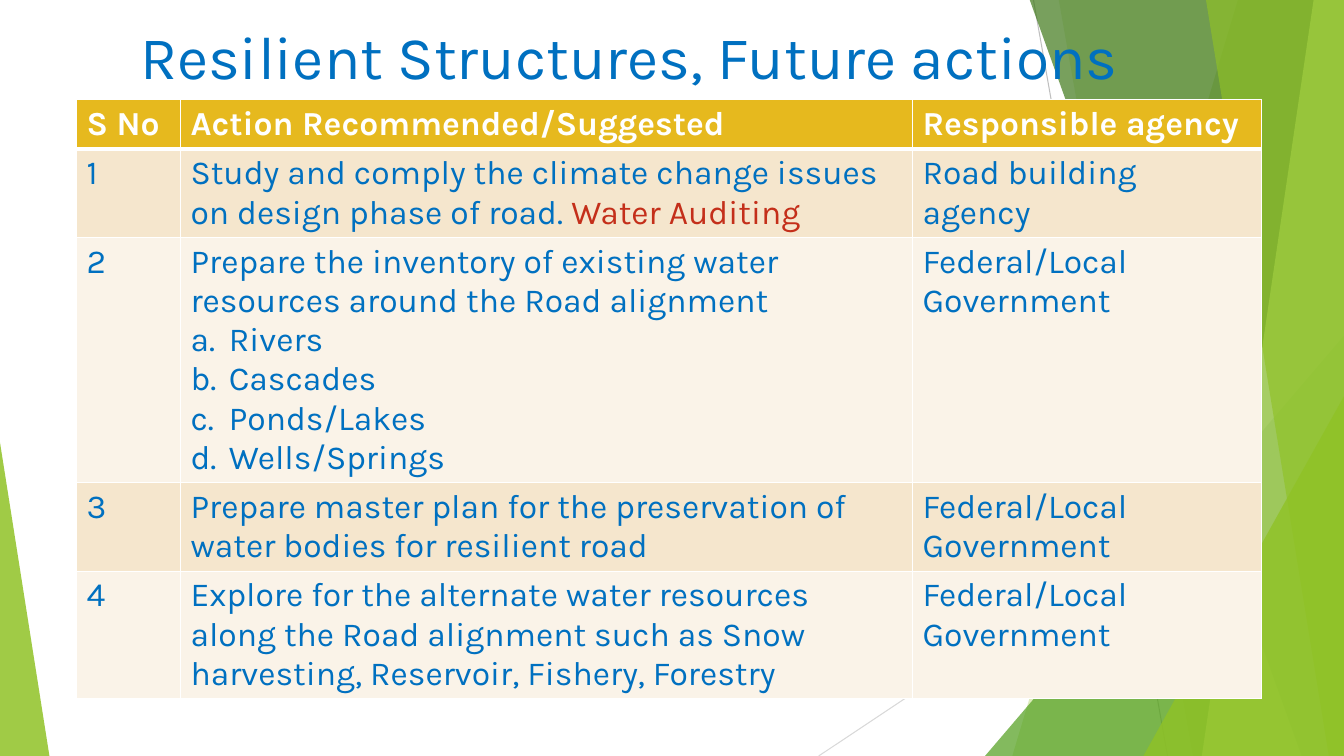
"""Build the slide on future actions for resilient road structures."""
from dataclasses import dataclass

from lxml import etree
from pptx import Presentation
from pptx.dml.color import RGBColor
from pptx.enum.dml import MSO_FILL
from pptx.enum.shapes import MSO_CONNECTOR, MSO_SHAPE
from pptx.enum.text import MSO_ANCHOR, MSO_AUTO_SIZE, PP_ALIGN
from pptx.oxml.ns import qn
from pptx.shapes.autoshape import Shape
from pptx.slide import Slide
from pptx.table import _Cell
from pptx.util import Emu, Pt

STRAIGHT = MSO_CONNECTOR.STRAIGHT
TRIANGLE = MSO_SHAPE.ISOSCELES_TRIANGLE
SOLID = MSO_FILL.SOLID
MIDDLE = MSO_ANCHOR.MIDDLE
CENTER = PP_ALIGN.CENTER
NO_AUTOFIT = MSO_AUTO_SIZE.NONE

EMU_PER_PX = 9144
PAGE_WIDTH, PAGE_HEIGHT = 1333, 750
PANEL_TOP = -1
FONT = "Karla"

WHITE = RGBColor(0xFF, 0xFF, 0xFF)
BLUE = RGBColor(0x00, 0x70, 0xC0)
RED = RGBColor(0xC4, 0x2F, 0x1A)
GOLD = RGBColor(0xE6, 0xB9, 0x1E)
SAND = RGBColor(0xF5, 0xE6, 0xCD)
CREAM = RGBColor(0xFA, 0xF3, 0xE8)
LEAF = RGBColor(0x90, 0xC2, 0x26)
GRASS = RGBColor(0x54, 0xA0, 0x21)
FOREST = RGBColor(0x3F, 0x78, 0x19)
LIME = RGBColor(0xC0, 0xE4, 0x74)
GRAY = RGBColor(0xBF, 0xBF, 0xBF)
PALE_GRAY = RGBColor(0xD9, 0xD9, 0xD9)


@dataclass(frozen=True)
class Ray:
    """A thin line across the page."""
    start: tuple[int, int]
    end: tuple[int, int]
    color: RGBColor


@dataclass(frozen=True)
class Panel:
    """A full-height band between a slanted edge and the right page edge."""
    top_x: int
    bottom_x: int
    color: RGBColor
    opacity: int


@dataclass(frozen=True)
class Corner:
    """A right triangle standing on the bottom page edge."""
    left: int
    top: int
    width: int
    apex: int
    color: RGBColor
    opacity: int


@dataclass(frozen=True)
class Action:
    """A recommended action with its agency."""
    text: str
    agency: str
    highlight: str = ""
    items: tuple[str, ...] = ()


RAYS = (
    Ray((1025, 0), (1158, 750), GRAY),
    Ray((1333, 403), (812, 750), PALE_GRAY),
)
FACETS = (
    Panel(1228, 1004, LEAF, 30),
    Panel(1050, 1183, LEAF, 20),
    Corner(977, 333, 356, 1, GRASS, 72),
    Panel(1021, 1291, FOREST, 70),
    Panel(1303, 1192, LIME, 70),
    Panel(1196, 1318, LEAF, 65),
    Corner(1134, 393, 199, 1, LEAF, 80),
    Corner(0, 439, 49, 0, LEAF, 85),
)
HEADINGS = ("S No", "Action Recommended/Suggested", "Responsible agency")
GOVERNMENT = "Federal/Local Government"
ACTIONS = (
    Action("Study and comply the climate change issues on design phase of road. ",
           "Road building agency", highlight="Water Auditing"),
    Action("Prepare the inventory of existing water resources around the Road alignment",
           GOVERNMENT, items=("Rivers", "Cascades", "Ponds/Lakes", "Wells/Springs")),
    Action("Prepare master plan for the preservation of water bodies for resilient road",
           GOVERNMENT),
    Action("Explore for the alternate water resources along the Road alignment such as "
           "Snow harvesting, Reservoir, Fishery, Forestry", GOVERNMENT),
)
COLUMN_WIDTHS = (103, 726, 346)
ROW_HEIGHTS = (48, 87, 243, 87, 126)


def px(length: int) -> Emu:
    """Turn px into EMU."""
    return Emu(length * EMU_PER_PX)


def write(para, text: str, *, size: float = 24, color: RGBColor = BLUE,
          bold: bool = False) -> None:
    """Add a formatted span to a paragraph."""
    span = para.add_run()
    span.text = text
    span.font.name = FONT
    span.font.size = Pt(size)
    span.font.bold = bold
    span.font.color.rgb = color


def draw_ray(page: Slide, ray: Ray) -> None:
    """Draw one thin line."""
    line = page.shapes.add_connector(STRAIGHT, *map(px, ray.start + ray.end))
    line.line.color.rgb = ray.color
    line.line.width = Pt(0.75)
    etree.SubElement(line.element.spPr, qn("a:effectLst"))


def add_panel(page: Slide, panel: Panel) -> Shape:
    """Add the outline of a slanted band."""
    builder = page.shapes.build_freeform(panel.top_x, PANEL_TOP, scale=EMU_PER_PX)
    builder.add_line_segments(((PAGE_WIDTH, PANEL_TOP), (PAGE_WIDTH, PAGE_HEIGHT),
                               (panel.bottom_x, PAGE_HEIGHT)), close=True)
    return builder.convert_to_shape()


def add_corner(page: Slide, corner: Corner) -> Shape:
    """Add a right triangle."""
    height = PAGE_HEIGHT - corner.top
    shape = page.shapes.add_shape(
        TRIANGLE, *map(px, (corner.left, corner.top, corner.width, height)))
    shape.adjustments[0] = corner.apex
    return shape


def draw_facet(page: Slide, facet: Panel | Corner) -> None:
    """Draw one translucent green facet."""
    add = add_panel if isinstance(facet, Panel) else add_corner
    shape = add(page, facet)
    shape.shadow.inherit = False
    shape.line.fill.background()
    shape.fill.solid()
    shape.fill.fore_color.rgb = facet.color
    color = next(shape.element.spPr.iter(qn("a:srgbClr")))
    etree.SubElement(color, qn("a:alpha"), val=str(facet.opacity * 1000))


def place_title(page: Slide) -> None:
    """Format the title and bring it in front of the facets."""
    title = page.shapes.title
    title.element.getparent().append(title.element)
    title.left, title.top, title.width, title.height = map(px, (76, 11, 1083, 87))
    frame = title.text_frame
    frame.auto_size = NO_AUTOFIT
    frame.word_wrap = True
    frame.vertical_anchor = MIDDLE
    frame.margin_left = px(23)
    para = frame.paragraphs[0]
    para.alignment = CENTER
    write(para, "Resilient Structures, Future actions", size=43.2)


def style_cell(cell: _Cell, row: int) -> None:
    """Set the fill and white borders of a cell."""
    thick_side = {0: "lnB", 1: "lnT"}.get(row)
    properties = cell._tc.get_or_add_tcPr()
    for side in ("lnL", "lnR", "lnT", "lnB"):
        width = Pt(3 if side == thick_side else 1)
        border = etree.SubElement(properties, qn(f"a:{side}"), w=str(width))
        fill = etree.SubElement(border, qn("a:solidFill"))
        etree.SubElement(fill, qn("a:srgbClr"), val=str(WHITE))
    cell.fill.solid()
    cell.fill.fore_color.rgb = GOLD if row == 0 else SAND if row % 2 else CREAM


def write_item(cell: _Cell, text: str) -> None:
    """Add a lettered item to a cell."""
    para = cell.text_frame.add_paragraph()
    properties = para._p.get_or_add_pPr()
    properties.set("marL", str(px(38)))
    properties.set("indent", str(-px(38)))
    etree.SubElement(properties, qn("a:buFont"), typeface="+mj-lt")
    etree.SubElement(properties, qn("a:buAutoNum"), type="alphaLcPeriod")
    write(para, text)


def draw_table(page: Slide) -> None:
    """Draw the table of recommended actions."""
    size = (sum(COLUMN_WIDTHS), sum(ROW_HEIGHTS))
    table = page.shapes.add_table(len(ROW_HEIGHTS), len(COLUMN_WIDTHS),
                                  *map(px, (76, 99, *size))).table
    for column, width in zip(table.columns, COLUMN_WIDTHS):
        column.width = px(width)
    for index, height in enumerate(ROW_HEIGHTS):
        table.rows[index].height = px(height)
        for cell in table.rows[index].cells:
            style_cell(cell, index)
    for cell, heading in zip(table.rows[0].cells, HEADINGS):
        write(cell.text_frame.paragraphs[0], heading, color=WHITE, bold=True)
    for number, action in enumerate(ACTIONS, 1):
        cells = list(table.rows[number].cells)
        for cell, text in zip(cells, (str(number), action.text, action.agency)):
            write(cell.text_frame.paragraphs[0], text)
        if action.highlight:
            write(cells[1].text_frame.paragraphs[0], action.highlight, color=RED)
        for item in action.items:
            write_item(cells[1], item)


def main() -> None:
    """Build and save the deck."""
    deck = Presentation()
    deck.slide_width, deck.slide_height = px(PAGE_WIDTH), px(PAGE_HEIGHT)
    page = deck.slides.add_slide(deck.slide_layouts[5])
    for ray in RAYS:
        draw_ray(page, ray)
    for facet in FACETS:
        draw_facet(page, facet)
    place_title(page)
    draw_table(page)
    deck.save("out.pptx")


if __name__ == "__main__":
    main()
